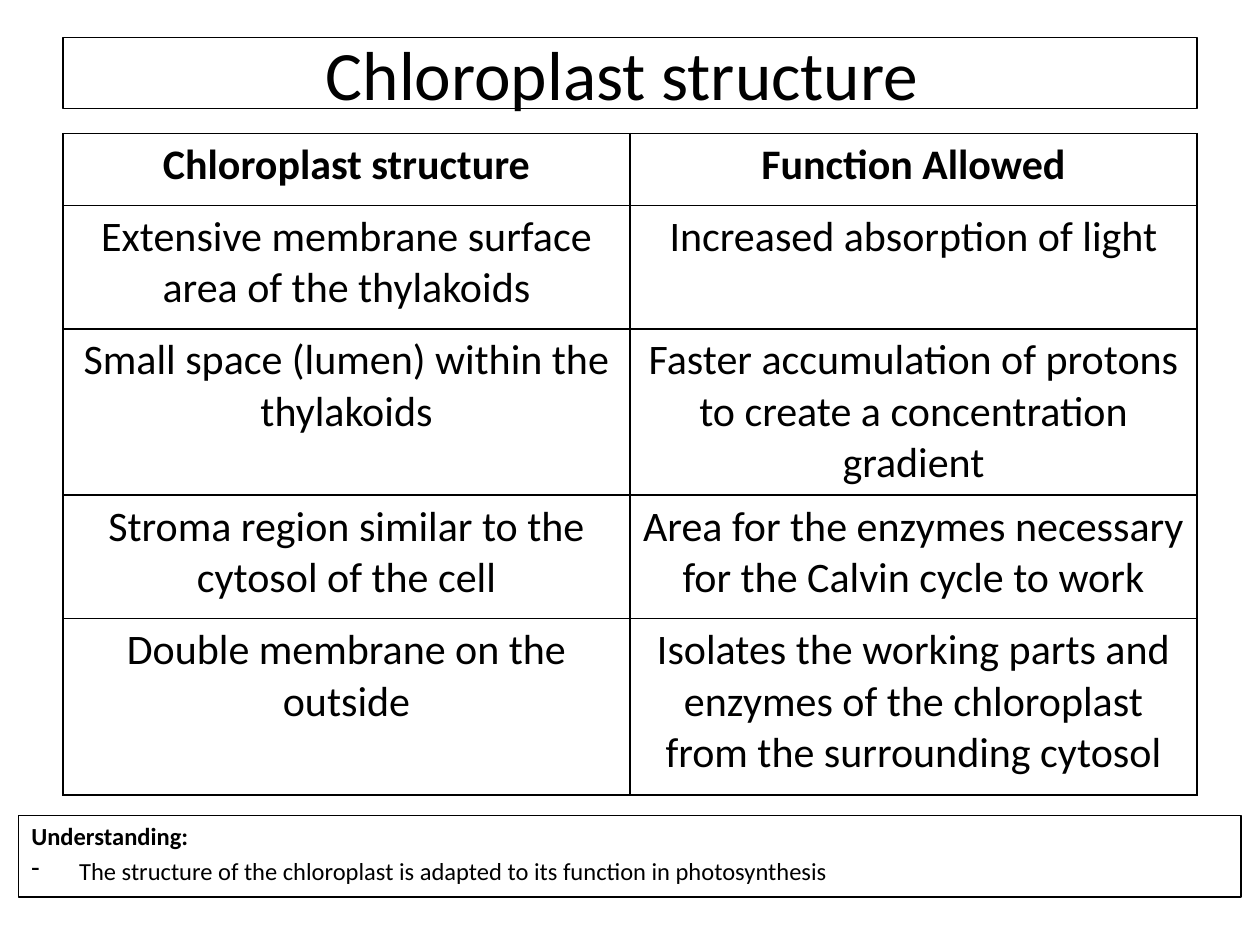
from lxml import etree
from pptx import Presentation
from pptx.dml.color import RGBColor
from pptx.enum.shapes import MSO_SHAPE
from pptx.enum.text import MSO_ANCHOR, MSO_AUTO_SIZE, PP_ALIGN
from pptx.oxml.ns import qn
from pptx.util import Inches, Pt

CENTER, LEFT = PP_ALIGN.CENTER, PP_ALIGN.LEFT
MIDDLE, TOP = MSO_ANCHOR.MIDDLE, MSO_ANCHOR.TOP
NO_AUTOFIT = MSO_AUTO_SIZE.NONE
RECTANGLE = MSO_SHAPE.RECTANGLE
TITLE_ONLY = 5
COLORS = {"ink": "000000"}
INK = RGBColor.from_string(COLORS["ink"])
FONT = "Calibri"

ROWS = [
    ("Chloroplast structure", "Function Allowed"),
    ("Extensive membrane surface area of the thylakoids",
     "Increased absorption of light"),
    ("Small space (lumen) within the thylakoids",
     "Faster accumulation of protons to create a concentration gradient"),
    ("Stroma region similar to the cytosol of the cell",
     "Area for the enzymes necessary for the Calvin cycle to work"),
    ("Double membrane on the outside",
     "Isolates the working parts and enzymes of the chloroplast "
     "from the surrounding cytosol"),
]
ROW_HEIGHTS = [0.57, 0.98, 1.32, 0.98, 1.4]


def format_paragraph(para, size, align, bold=False):
    para.alignment = align
    for span in para.runs:
        span.font.name = FONT
        span.font.size = Pt(size)
        span.font.bold = bold
        span.font.color.rgb = INK


def add_borders(cell, width):
    """Draw the four sides of a table cell; lines must precede the fill."""
    properties = cell._tc.get_or_add_tcPr()
    for index, side in enumerate(("lnL", "lnR", "lnT", "lnB")):
        line = etree.Element(qn(f"a:{side}"), w=str(Pt(width)))
        fill = etree.SubElement(line, qn("a:solidFill"))
        etree.SubElement(fill, qn("a:srgbClr"), val=COLORS["ink"])
        properties.insert(index, line)


deck = Presentation()
deck.slide_width, deck.slide_height = Inches(10), Inches(7.5)
page = deck.slides.add_slide(deck.slide_layouts[TITLE_ONLY])

# Title
title = page.shapes.title
title.left, title.top = Inches(0.5), Inches(0.3)
title.width, title.height = Inches(9), Inches(0.56)
title.line.color.rgb = INK
title.line.width = Pt(0.75)
title.text_frame.text = "Chloroplast structure "
title.text_frame.auto_size = NO_AUTOFIT
title.text_frame.vertical_anchor = MIDDLE
format_paragraph(title.text_frame.paragraphs[0], 39.6, CENTER)

# Understanding box
understanding = page.shapes.add_shape(
    RECTANGLE, Inches(0.15), Inches(6.47), Inches(9.7), Inches(0.65))
understanding.shadow.inherit = False
understanding.fill.background()
understanding.line.color.rgb = INK
understanding.line.width = Pt(0.75)
frame = understanding.text_frame
frame.word_wrap = True
frame.vertical_anchor = TOP
frame.text = ("Understanding:\nThe structure of the chloroplast is adapted "
              "to its function in photosynthesis")
heading, point = frame.paragraphs
for para in (heading, point):
    format_paragraph(para, 14, LEFT, bold=para is heading)
    para.space_before = Pt(2.8)
point_properties = point._p.get_or_add_pPr()
point_properties.set("marL", str(Inches(0.38)))
point_properties.set("indent", str(Inches(-0.38)))
etree.SubElement(point_properties, qn("a:buChar"), char="-")

# Structure and function table
table = page.shapes.add_table(
    len(ROWS), 2, Inches(0.5), Inches(1.06),
    Inches(9), Inches(sum(ROW_HEIGHTS))).table
table.horz_banding = False
for column in table.columns:
    column.width = Inches(4.5)
for row, height, texts in zip(table.rows, ROW_HEIGHTS, ROWS):
    row.height = Inches(height)
    for cell, text in zip(row.cells, texts):
        cell.text_frame.text = text
        cell.fill.background()
        add_borders(cell, 1)
        format_paragraph(cell.text_frame.paragraphs[0], 24, CENTER,
                         bold=texts is ROWS[0])

deck.save("out.pptx")
